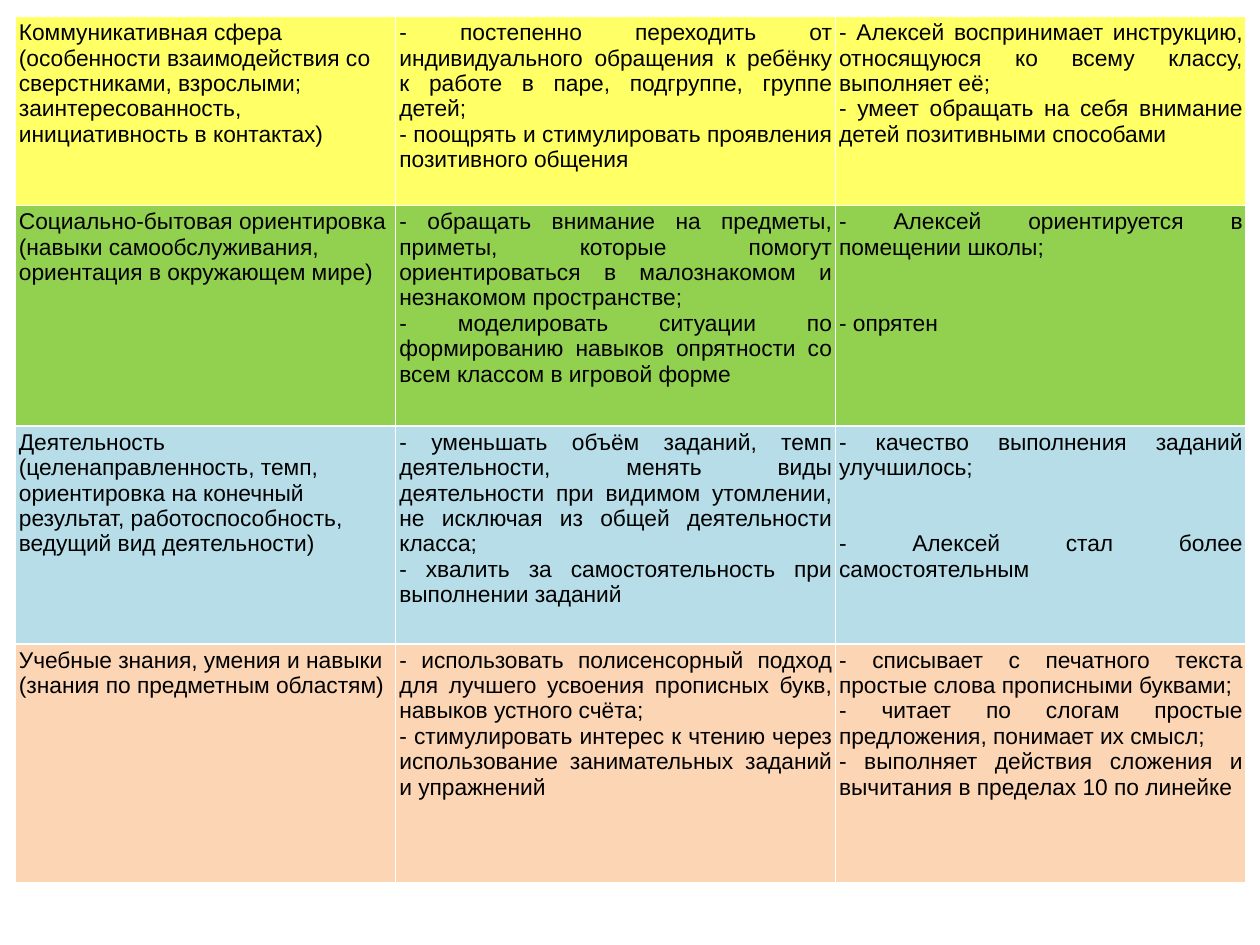
from lxml import etree
from pptx import Presentation
from pptx.dml.color import RGBColor
from pptx.enum import text
from pptx.oxml import ns
from pptx.util import Inches, Pt


def color(value):
    return RGBColor.from_string(value)


def set_borders(cell, value, width):
    tcPr = cell._tc.get_or_add_tcPr()
    for i, side in enumerate(("lnL", "lnR", "lnT", "lnB")):
        ln = etree.Element(ns.qn("a:" + side), w=str(Pt(width)))
        fill = etree.SubElement(ln, ns.qn("a:solidFill"))
        etree.SubElement(fill, ns.qn("a:srgbClr"), val=value)
        tcPr.insert(i, ln)


# Content: fill, row height, then the paragraphs of each cell
rows = [
    ("FFFF66", 1.5, [
        ["Коммуникативная сфера (особенности взаимодействия со сверстниками, взрослыми; "
         "заинтересованность, инициативность в контактах)"],
        ["- постепенно переходить от индивидуального обращения к ребёнку к работе в паре, "
         "подгруппе, группе детей;",
         "- поощрять и стимулировать проявления позитивного общения"],
        ["- Алексей воспринимает инструкцию, относящуюся ко всему классу, выполняет её;",
         "- умеет обращать на себя внимание детей позитивными способами"],
    ]),
    ("92D050", 1.75, [
        ["Социально-бытовая ориентировка (навыки самообслуживания, "
         "ориентация в окружающем мире)"],
        ["- обращать внимание на предметы, приметы, которые помогут ориентироваться "
         "в малознакомом и незнакомом пространстве;",
         "- моделировать ситуации по формированию навыков опрятности со всем классом "
         "в игровой форме"],
        ["- Алексей ориентируется в помещении школы;", "- опрятен"],
    ]),
    ("B7DEE8", 1.73, [
        ["Деятельность (целенаправленность, темп, ориентировка на конечный результат, "
         "работоспособность, ведущий вид деятельности)"],
        ["- уменьшать объём заданий, темп деятельности, менять виды деятельности при "
         "видимом утомлении, не исключая из общей деятельности класса;",
         "- хвалить за самостоятельность при выполнении заданий"],
        ["- качество выполнения заданий улучшилось;",
         "- Алексей стал более самостоятельным"],
    ]),
    ("FCD5B5", 1.9, [
        ["Учебные знания, умения и навыки (знания по предметным областям)"],
        ["- использовать полисенсорный подход для лучшего усвоения прописных букв, "
         "навыков устного счёта;",
         "- стимулировать интерес к чтению через использование занимательных заданий "
         "и упражнений"],
        ["- списывает с печатного текста простые слова прописными буквами;",
         "- читает по слогам простые предложения, понимает их смысл;",
         "- выполняет действия сложения и вычитания в пределах 10 по линейке"],
    ]),
]
col_widths = [3.02, 3.49, 3.26]
spaced_cells = [(1, 2), (2, 2)]  # two lines of space before the last paragraph

# Slide
prs = Presentation()
prs.slide_width, prs.slide_height = Inches(10), Inches(7.5)
s = prs.slides.add_slide(prs.slide_layouts[6])

# Table
table = s.shapes.add_table(len(rows), len(col_widths), Inches(0.12), Inches(0.13),
                           Inches(9.77), Inches(6.88)).table
table.first_row = table.horz_banding = False
for col, width in zip(table.columns, col_widths):
    col.width = Inches(width)

# Cells
for i, (fill, height, cells) in enumerate(rows):
    table.rows[i].height = Inches(height)
    for j, lines in enumerate(cells):
        cell = table.cell(i, j)
        cell.margin_left = cell.margin_right = Inches(0.03)
        cell.margin_top = cell.margin_bottom = Inches(0.03)
        cell.fill.solid()
        cell.fill.fore_color.rgb = color(fill)
        set_borders(cell, "FFFFFF", 1)
        tf = cell.text_frame
        tf.text = "\n".join(lines)
        for p in tf.paragraphs:
            p.alignment = text.PP_ALIGN.JUSTIFY if j else text.PP_ALIGN.LEFT
            font = p.runs[0].font
            font.name, font.size = "Arial", Pt(13)
            font.color.rgb = color("000000")
        if (i, j) in spaced_cells:
            tf.paragraphs[-1].space_before = Pt(29)

prs.save("out.pptx")
